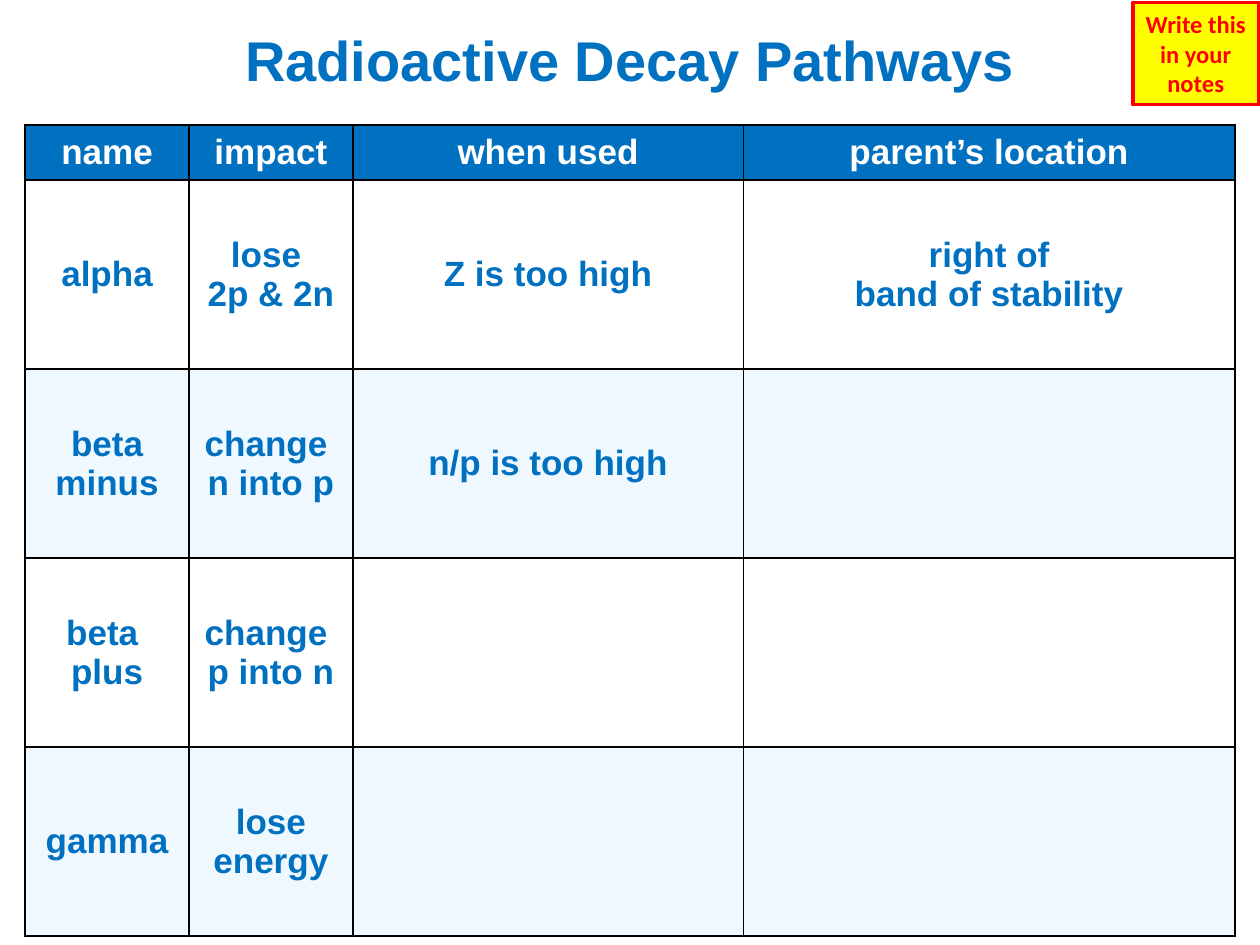
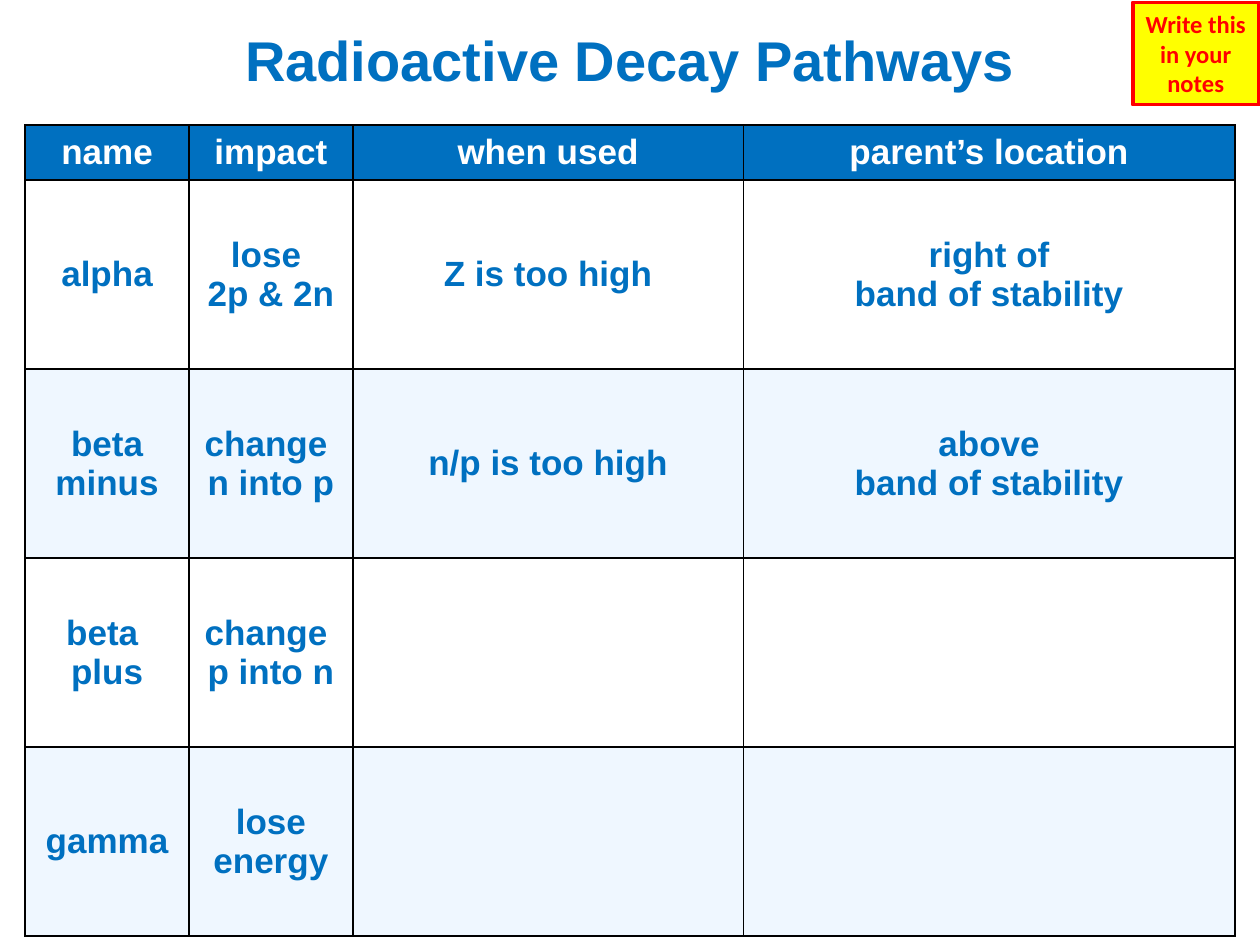
from dataclasses import dataclass

from lxml.etree import SubElement
from pptx import Presentation
from pptx.dml.color import RGBColor as RGB
from pptx.enum.shapes import MSO_SHAPE as SHAPE
from pptx.enum.text import MSO_ANCHOR as ANCHOR, MSO_AUTO_SIZE as AUTOSIZE, PP_ALIGN as ALIGN
from pptx.oxml.ns import qn
from pptx.util import Pt


# Theme: colours, fonts and sizes shared by both slides
@dataclass(frozen=True)
class Theme:
    blue: str = "0070C0"
    pale: str = "EFF7FF"
    white: str = "FFFFFF"
    black: str = "000000"
    red: str = "FF0000"
    yellow: str = "FFFF00"
    font: str = "Arial"
    note_font: str = "Calibri"
    title_pt: int = 32
    body_pt: int = 20
    note_pt: int = 14
    border_pt: float = 1
    note_line_pt: float = 2.25


T = Theme()
EMU_PER_PX = 9144  # 100 px to the inch

# Content
TITLE = "Radioactive Decay Pathways"
NOTE = "Write this in your notes"
HEADERS = ["name", "impact", "when used", "parent’s location"]
COL_WIDTHS = [130, 130, 310, 390]
ROW_HEIGHTS = [80, 44] + [150] * 4


def pathways(beta_minus_location):
    return [
        ["alpha", "lose \n2p & 2n", "Z is too high", "right of\nband of stability"],
        ["beta\nminus", "change \nn into p", "n/p is too high", beta_minus_location],
        ["beta \nplus", "change \np into n", "", ""],
        ["gamma", "lose\nenergy", "", ""],
    ]


# Helpers
def px(n):
    return n * EMU_PER_PX


def write(tf, text, size, color, font=T.font):
    tf.text = text
    for p in tf.paragraphs:
        p.alignment = ALIGN.CENTER
        p.font.size = Pt(size)
        for r in p.runs:
            f = r.font
            f.name, f.size, f.bold = font, Pt(size), True
            f.color.rgb = RGB.from_string(color)


def set_borders(cell, drawn="LRTB"):
    """Draw the listed sides and hide the others; call before filling the cell."""
    tc_pr = cell._tc.get_or_add_tcPr()
    for side in "LRTB":
        ln = SubElement(tc_pr, qn(f"a:ln{side}"), w=str(Pt(T.border_pt)))
        if side in drawn:
            fill = SubElement(ln, qn("a:solidFill"))
            SubElement(fill, qn("a:srgbClr"), val=T.black)
        else:
            SubElement(ln, qn("a:noFill"))


def fill_cell(cell, text, fill, color):
    set_borders(cell)
    cell.fill.solid()
    cell.fill.fore_color.rgb = RGB.from_string(fill)
    cell.vertical_anchor = ANCHOR.MIDDLE
    write(cell.text_frame, text, T.body_pt, color)


# Elements
def add_title_row(table):
    cells = list(table.rows[0].cells)
    for cell in cells:
        set_borders(cell, drawn="B")
        cell.fill.background()
    cells[0].merge(cells[-1])
    write(cells[0].text_frame, TITLE, T.title_pt, T.blue)


def add_pathway_table(s, rows):
    frame = s.shapes.add_table(len(ROW_HEIGHTS), len(COL_WIDTHS), px(20), px(19),
                               px(sum(COL_WIDTHS)), px(sum(ROW_HEIGHTS)))
    table = frame.table
    table.first_row = table.horz_banding = False
    for col, width in zip(table.columns, COL_WIDTHS):
        col.width = px(width)
    for row, height in zip(table.rows, ROW_HEIGHTS):
        row.height = px(height)

    add_title_row(table)
    for c, text in enumerate(HEADERS):
        fill_cell(table.cell(1, c), text, T.blue, T.white)
    for r, texts in enumerate(rows):
        band = T.pale if r % 2 else T.white
        for c, text in enumerate(texts):
            fill_cell(table.cell(r + 2, c), text, band, T.blue)


def add_note(s):
    sp = s.shapes.add_shape(SHAPE.RECTANGLE, px(899), px(2), px(100), px(81))
    sp.shadow.inherit = False
    sp.fill.solid()
    sp.fill.fore_color.rgb = RGB.from_string(T.yellow)
    sp.line.color.rgb = RGB.from_string(T.red)
    sp.line.width = Pt(T.note_line_pt)
    tf = sp.text_frame
    tf.word_wrap = True
    tf.auto_size = AUTOSIZE.SHAPE_TO_FIT_TEXT
    write(tf, NOTE, T.note_pt, T.red, T.note_font)


def add_pathway_slide(prs, beta_minus_location):
    s = prs.slides.add_slide(prs.slide_layouts[6])
    add_pathway_table(s, pathways(beta_minus_location))
    add_note(s)


def main():
    prs = Presentation()
    prs.slide_width, prs.slide_height = px(1000), px(750)
    # The second slide reveals one more answer
    for location in ("", "above\nband of stability"):
        add_pathway_slide(prs, location)
    prs.save("out.pptx")


if __name__ == "__main__":
    main()
